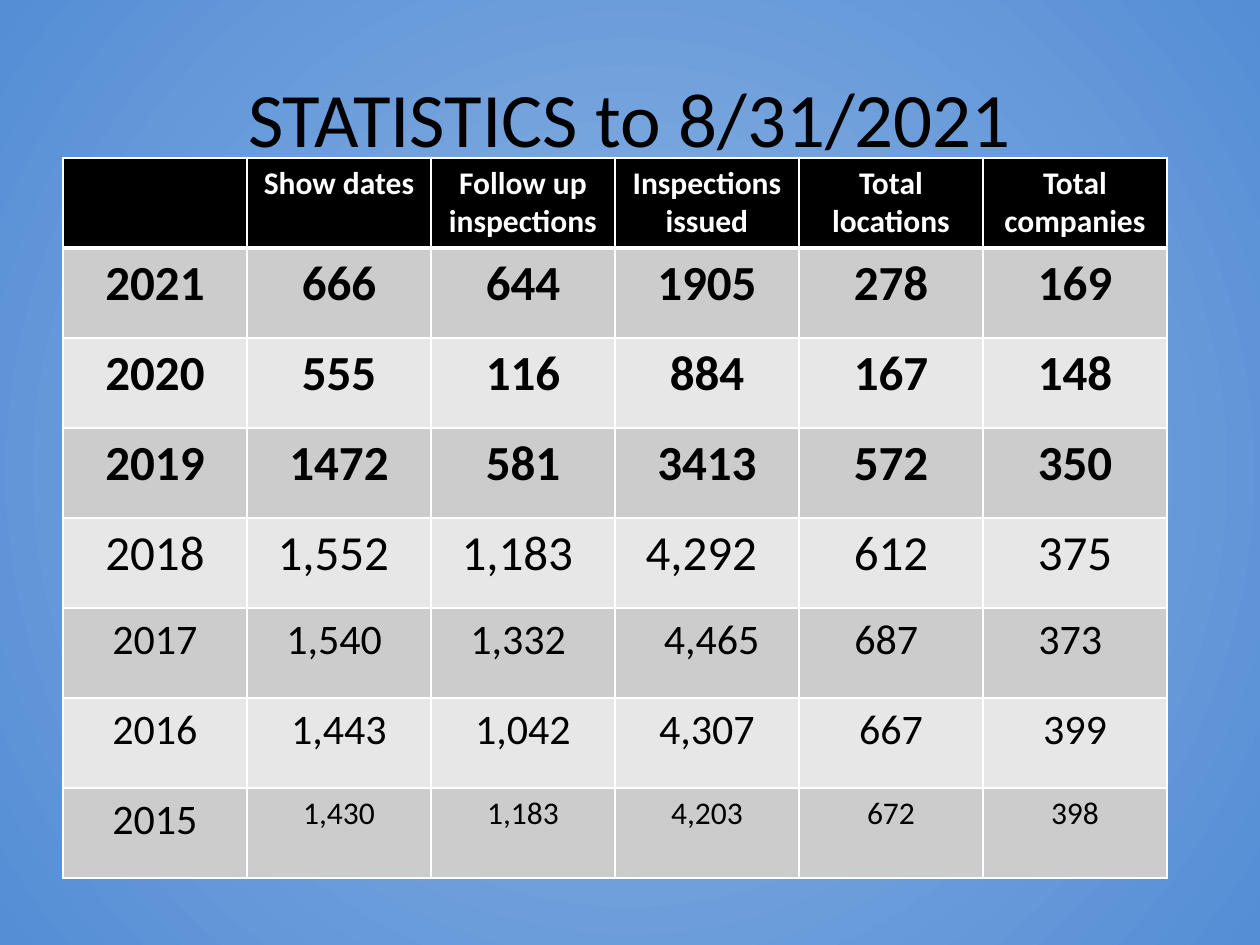
import pptx
import pptx.util
import pptx.dml.color
import pptx.enum.text
import pptx.oxml.ns
import lxml.etree

EMU_PER_PX = 914400 / 126
COLORS = {"black": "000000", "white": "FFFFFF", "band_dark": "CCCCCC",
          "band_light": "E7E7E7", "glow": "8EB4E3", "edge": "558ED5"}
HEADINGS = ["", "Show dates", "Follow up inspections", "Inspections issued",
            "Total locations", "Total companies"]
# Per year: size of the year, size of the figures, bold, figures
YEARS = {
    "2021": (28, 28, True, ["666", "644", "1905", "278", "169"]),
    "2020": (28, 28, True, ["555", "116", "884", "167", "148"]),
    "2019": (28, 28, True, ["1472", "581", "3413", "572", "350"]),
    "2018": (28, 28, False, ["1,552 ", "1,183 ", "4,292 ", "612", "375"]),
    "2017": (24, 24, False, ["1,540 ", "1,332 ", " 4,465", "687 ", "373 "]),
    "2016": (24, 24, False, ["1,443", "1,042", "4,307", "667", "399"]),
    "2015": (24, 18, False, ["1,430", "1,183", "4,203", "672", "398"]),
}


def px(length):
    return pptx.util.Emu(round(length * EMU_PER_PX))


def rgb(name):
    return pptx.dml.color.RGBColor.from_string(COLORS[name])


def write(frame, text, size, color, bold=False):
    para = frame.paragraphs[0]
    para.alignment = pptx.enum.text.PP_ALIGN.CENTER
    span = para.add_run()
    span.text = text
    formats = {"name": "Calibri", "size": pptx.util.Pt(size), "bold": bold}
    for name, value in formats.items():
        setattr(span.font, name, value)
    span.font.color.rgb = rgb(color)


def add_background(page):
    fill = page.background.fill
    fill.gradient()
    for stop, position, color in zip(fill.gradient_stops, (0, 1), ("glow", "edge")):
        stop.position = position
        stop.color.rgb = rgb(color)
    # Turn the linear gradient into a circular one around the centre
    qn = pptx.oxml.ns.qn
    gradient = page.background._cSld.find(".//" + qn("a:gradFill"))
    gradient.remove(gradient.find(qn("a:lin")))
    circle = lxml.etree.SubElement(gradient, qn("a:path"), {"path": "circle"})
    sides = dict.fromkeys("ltrb", "50000")
    lxml.etree.SubElement(circle, qn("a:fillToRect"), sides)


def add_title(page, left, top, width, height):
    title = page.shapes.title
    box = {"left": left, "top": top, "width": width, "height": height}
    for name, value in box.items():
        setattr(title, name, px(value))
    title.text_frame.vertical_anchor = pptx.enum.text.MSO_ANCHOR.MIDDLE
    write(title.text_frame, "STATISTICS to 8/31/2021", 44, "black")


def set_borders(cell, top, bottom):
    qn = pptx.oxml.ns.qn
    properties = cell._tc.get_or_add_tcPr()
    widths = {"L": 1, "R": 1, "T": top, "B": bottom}
    for index, (side, width) in enumerate(widths.items()):
        line = lxml.etree.Element(qn("a:ln" + side), w=str(pptx.util.Pt(width)))
        solid = lxml.etree.SubElement(line, qn("a:solidFill"))
        lxml.etree.SubElement(solid, qn("a:srgbClr"), val=COLORS["white"])
        properties.insert(index, line)


def add_statistics(page, left, top, width, height):
    rows = [[(text, 18, "white", True) for text in HEADINGS]]
    for year, (year_size, size, bold, figures) in YEARS.items():
        rows.append([(year, year_size, "black", bold)]
                    + [(text, size, "black", bold) for text in figures])
    table = page.shapes.add_table(len(rows), len(HEADINGS), px(left), px(top),
                                  px(width), px(height)).table
    for row_index, row in enumerate(rows):
        fill = ("band_dark" if row_index % 2 else "band_light") if row_index else "black"
        for column_index, content in enumerate(row):
            cell = table.cell(row_index, column_index)
            cell.fill.solid()
            cell.fill.fore_color.rgb = rgb(fill)
            # A thicker rule separates the headings from the years
            set_borders(cell, 3 if row_index == 1 else 1, 3 if row_index == 0 else 1)
            if content[0]:
                write(cell.text_frame, *content)


def main():
    deck = pptx.Presentation()
    deck.slide_width, deck.slide_height = px(1260), px(945)
    page = deck.slides.add_slide(deck.slide_layouts.get_by_name("Title Only"))
    add_background(page)
    add_title(page, 63, 38, 1134, 158)
    add_statistics(page, 63, 158, 1104, 720)
    deck.save("out.pptx")


if __name__ == "__main__":
    main()
